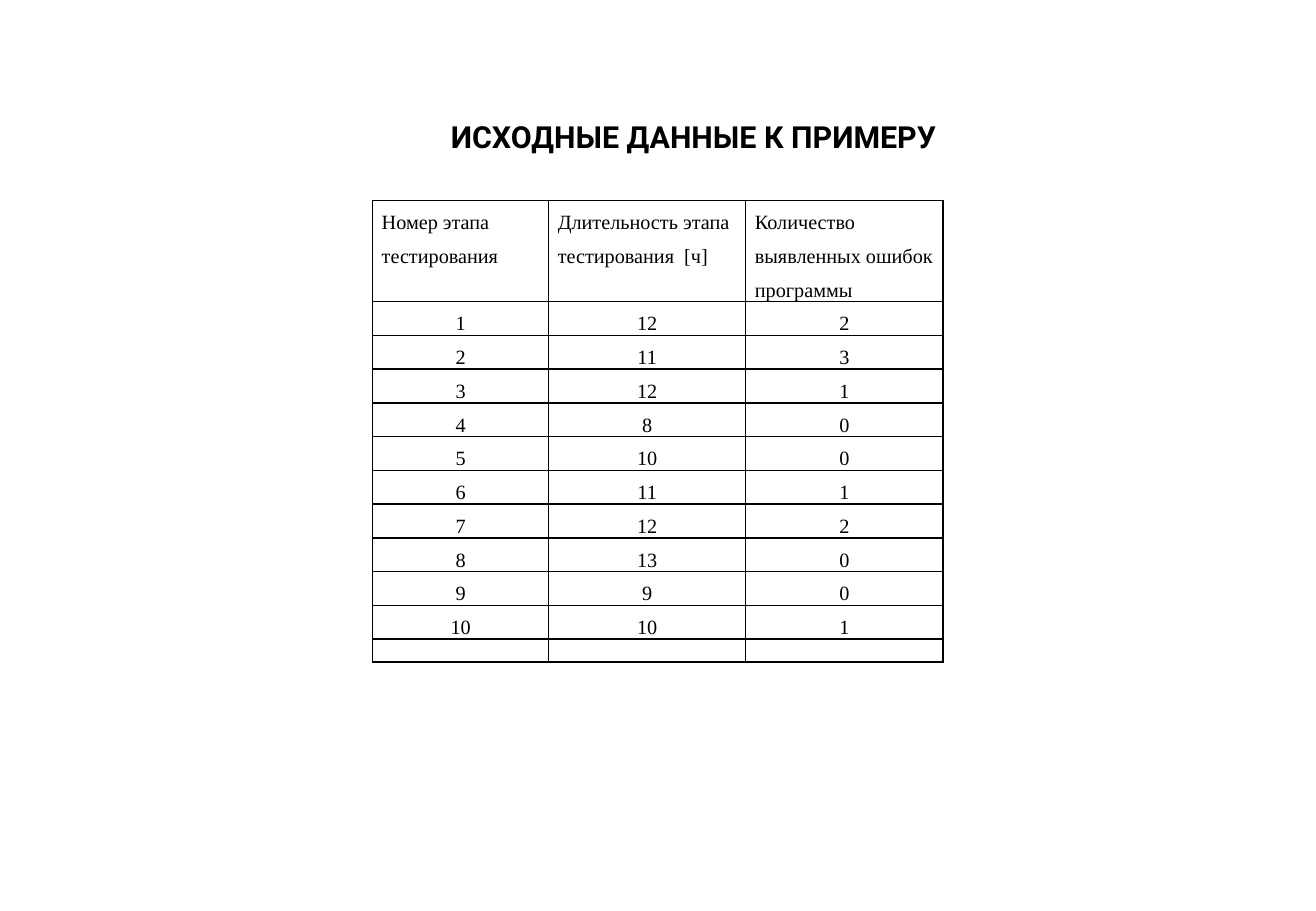
from lxml import etree
from pptx import Presentation
from pptx.dml.color import RGBColor
from pptx.enum import text
from pptx.oxml import ns
from pptx.util import Cm, Pt

BLACK = "000000"
TABLE_FONT = "Times New Roman"
HEADINGS = [
    "Номер этапа тестирования",
    "Длительность этапа тестирования  [ч]",
    "Количество выявленных ошибок программы",
]
DURATIONS = [12, 11, 12, 8, 10, 11, 12, 13, 9, 10]
ERRORS = [2, 3, 1, 0, 0, 1, 2, 0, 0, 1]
COLUMN_WIDTHS = [3.68, 4.12, 4.12]
HEADING_HEIGHT, ROW_HEIGHT, LAST_HEIGHT = 2.1, 0.7, 0.46


def paint(target, colour):
    target.rgb = RGBColor.from_string(colour)


def add_span(para, words, size, face, bold=False):
    span = para.add_run()
    span.text = words
    span.font.size = Pt(size)
    span.font.name = face
    span.font.bold = bold
    paint(span.font.color, BLACK)


def add_title(page, words):
    title = page.shapes.title
    title.left, title.top = Cm(9.17), Cm(2.34)
    title.width, title.height = Cm(10.74), Cm(1.02)
    frame = title.text_frame
    frame.word_wrap = False
    frame.auto_size = text.MSO_AUTO_SIZE.NONE
    frame.vertical_anchor = text.MSO_ANCHOR.TOP
    para = frame.paragraphs[0]
    para.alignment = text.PP_ALIGN.LEFT
    add_span(para, words, 18, "Roboto", bold=True)


def add_borders(cell, colour, width):
    properties = cell._tc.get_or_add_tcPr()
    for place, side in enumerate(("lnL", "lnR", "lnT", "lnB")):
        line = etree.Element(ns.qn(f"a:{side}"), w=str(Pt(width)))
        fill = etree.SubElement(line, ns.qn("a:solidFill"))
        etree.SubElement(fill, ns.qn("a:srgbClr"), val=colour)
        properties.insert(place, line)


def fill_cell(cell, words, alignment):
    cell.margin_left = cell.margin_right = Cm(0.19)
    cell.margin_top = cell.margin_bottom = 0
    cell.fill.background()
    add_borders(cell, BLACK, 1)
    para = cell.text_frame.paragraphs[0]
    para.alignment = alignment
    if words:
        para.line_spacing = 1.5
        add_span(para, words, 12, TABLE_FONT)
    else:
        # An empty cell takes its line height from the end mark.
        etree.SubElement(para._p, ns.qn("a:endParaRPr"), sz="1100")


def add_stage_table(page):
    stages = [
        [str(value) for value in (number, *values)]
        for number, values in enumerate(zip(DURATIONS, ERRORS), 1)
    ]
    rows = [HEADINGS, *stages, [""] * len(HEADINGS)]
    heights = [HEADING_HEIGHT, *[ROW_HEIGHT] * len(stages), LAST_HEIGHT]
    table = page.shapes.add_table(
        len(rows), len(HEADINGS), Cm(7.79), Cm(4.19),
        Cm(sum(COLUMN_WIDTHS)), Cm(sum(heights)),
    ).table
    table.first_row = table.horz_banding = False
    for column, width in zip(table.columns, COLUMN_WIDTHS):
        column.width = Cm(width)
    for index, (row, height) in enumerate(zip(table.rows, heights)):
        row.height = Cm(height)
        alignment = text.PP_ALIGN.CENTER if index else text.PP_ALIGN.LEFT
        for cell, words in zip(row.cells, rows[index]):
            fill_cell(cell, words, alignment)


def main():
    deck = Presentation()
    deck.slide_width, deck.slide_height = Cm(27.51), Cm(19.05)
    page = deck.slides.add_slide(deck.slide_layouts.get_by_name("Title Only"))
    page.background.fill.solid()
    paint(page.background.fill.fore_color, "FFFFFF")
    add_title(page, "ИСХОДНЫЕ ДАННЫЕ К ПРИМЕРУ")
    add_stage_table(page)
    deck.save("out.pptx")


if __name__ == "__main__":
    main()
